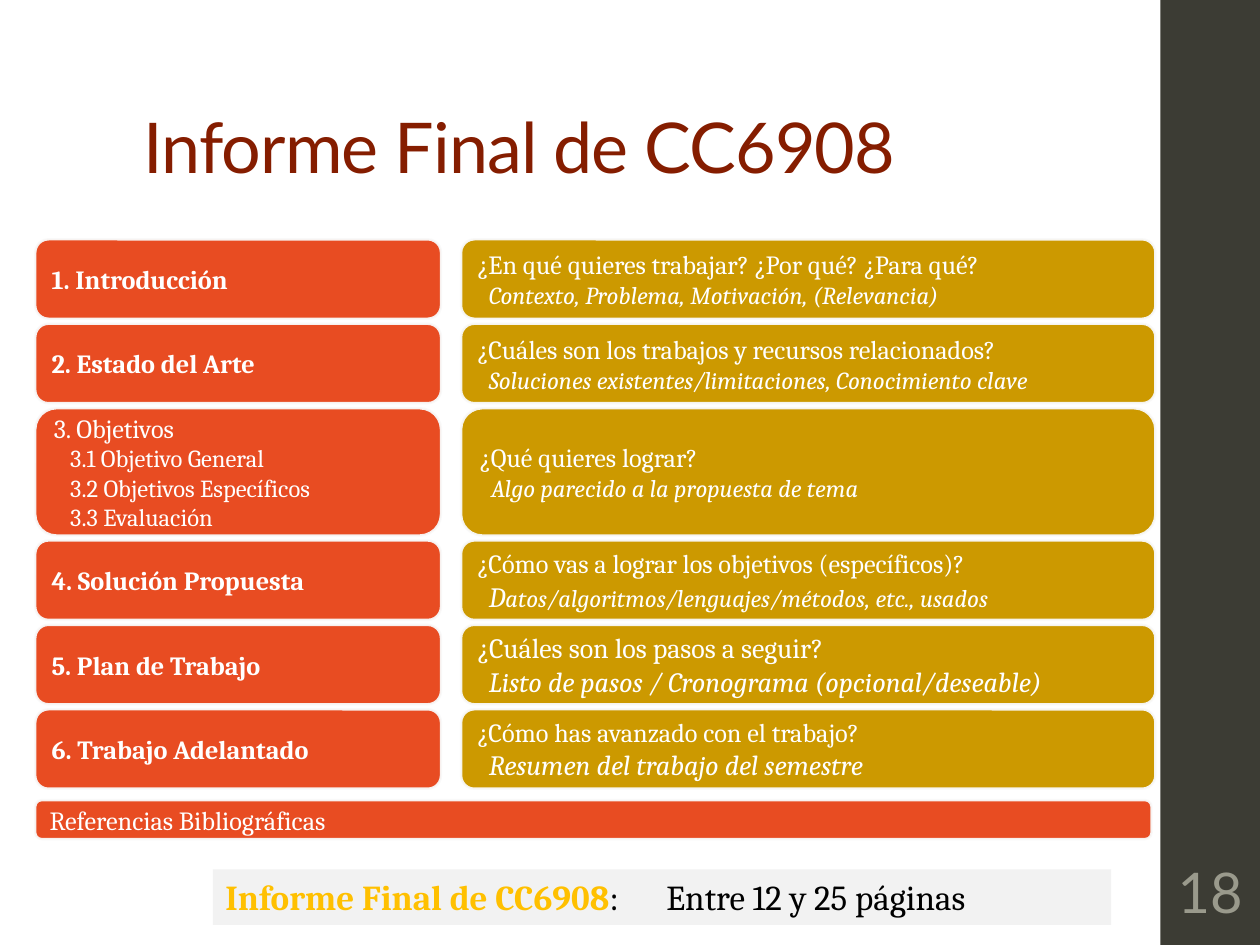
"""Build the slide outlining the final report of CC6908."""
from dataclasses import dataclass

from pptx import Presentation
from pptx.dml.color import RGBColor
from pptx.enum.shapes import MSO_SHAPE as Shape
from pptx.enum.text import MSO_ANCHOR as Anchor, PP_ALIGN as Align
from pptx.oxml.ns import qn
from pptx.util import Inches, Pt
from lxml.etree import SubElement

ORANGE = RGBColor(0xE8, 0x4C, 0x22)
GOLD = RGBColor(0xCC, 0x99, 0x00)
WHITE = RGBColor(0xFF, 0xFF, 0xFF)
EDGE = RGBColor(0xF9, 0xF9, 0xF9)
DARK = RGBColor(0x3C, 0x3C, 0x34)
GRAY = RGBColor(0x9A, 0x9A, 0x8C)
MAROON = RGBColor(0x85, 0x1D, 0x00)
PALE = RGBColor(0xF2, 0xF2, 0xF2)
AMBER = RGBColor(0xFF, 0xC0, 0x00)
BLACK = RGBColor(0x00, 0x00, 0x00)

SERIF, SANS = "Cambria", "Lato"
LEFT_X, LEFT_W = 0.28, 3.22
RIGHT_X, RIGHT_W = 3.66, 5.51
TOP, GAP = 1.9, 0.04


@dataclass
class Line:
    text: str
    size: int = 15
    bold: bool = False
    italic: bool = False
    indent: float = 0
    initial_size: int = 0


@dataclass
class Section:
    heading: list[Line]
    answer: list[Line]
    height: float = 0.63


def heading(text: str) -> list[Line]:
    return [Line(text, bold=True)]


def answer(question: str, detail: str, size: int = 14,
           question_size: int = 15, initial_size: int = 0) -> list[Line]:
    return [Line(question, question_size),
            Line(detail, size, italic=True, indent=0.09, initial_size=initial_size)]


SECTIONS = [
    Section(heading("1. Introducción"),
            answer("¿En qué quieres trabajar? ¿Por qué? ¿Para qué?",
                   "Contexto, Problema, Motivación, (Relevancia)")),
    Section(heading("2. Estado del Arte"),
            answer("¿Cuáles son los trabajos y recursos relacionados?",
                   "Soluciones existentes/limitaciones, Conocimiento clave")),
    Section([Line("3. Objetivos")] + [
                Line(text, 14, indent=0.13) for text in (
                    "3.1 Objetivo General", "3.2 Objetivos Específicos", "3.3 Evaluación")],
            answer("¿Qué quieres lograr?", "Algo parecido a la propuesta de tema"), 1.01),
    Section(heading("4. Solución Propuesta"),
            answer("¿Cómo vas a lograr los objetivos (específicos)?",
                   "Datos/algoritmos/lenguajes/métodos, etc., usados", initial_size=16)),
    Section(heading("5. Plan de Trabajo"),
            answer("¿Cuáles son los pasos a seguir?",
                   "Listo de pasos / Cronograma (opcional/deseable)", 16, 16)),
    Section(heading("6. Trabajo Adelantado"),
            answer("¿Cómo has avanzado con el trabajo?",
                   "Resumen del trabajo del semestre", 16)),
]


def set_font(font, name: str, size: int, color: RGBColor) -> None:
    font.name, font.size = name, Pt(size)
    font.color.rgb = color


def add_block(s, kind, x: float, y: float, w: float, h: float, fill: RGBColor):
    sp = s.shapes.add_shape(kind, Inches(x), Inches(y), Inches(w), Inches(h))
    sp.shadow.inherit = False
    sp.fill.solid()
    sp.fill.fore_color.rgb = fill
    sp.line.fill.background()
    return sp


def add_card(s, x: float, y: float, w: float, h: float,
             fill: RGBColor, lines: list[Line]) -> None:
    sp = add_block(s, Shape.ROUNDED_RECTANGLE, x, y, w, h, fill)
    sp.line.color.rgb = EDGE
    sp.line.width = Pt(1.35)
    edge = sp.line._get_or_add_ln().find(".//" + qn("a:srgbClr"))
    SubElement(edge, qn("a:alpha"), val="95000")
    tf = sp.text_frame
    tf.vertical_anchor = Anchor.MIDDLE
    for i, line in enumerate(lines):
        p = tf.add_paragraph() if i else tf.paragraphs[0]
        p.alignment = Align.LEFT
        p._p.get_or_add_pPr().set("marL", str(Inches(line.indent)))
        set_font(p.font, SERIF, line.size, WHITE)
        p.font.bold, p.font.italic = line.bold, line.italic
        text = line.text
        if line.initial_size:
            r = p.add_run()
            r.text, text = text[0], text[1:]
            r.font.size = Pt(line.initial_size)
        p.add_run().text = text


def add_title(s) -> None:
    sp = s.shapes.title
    sp.left, sp.top, sp.width, sp.height = map(Inches, (1.04, 0.1, 7.95, 1.45))
    tf = sp.text_frame
    tf.vertical_anchor = Anchor.BOTTOM
    p = tf.paragraphs[0]
    p.text = "Informe Final de CC6908"
    p.alignment, p.line_spacing = Align.LEFT, 0.9
    set_font(p.font, SANS, 40, MAROON)
    p.runs[0].font._element.set("spc", "-50")


def add_page_number(s) -> None:
    sp = s.shapes.add_textbox(Inches(9.23), Inches(6.75), Inches(0.75), Inches(0.65))
    tf = sp.text_frame
    tf.word_wrap = True
    tf.vertical_anchor = Anchor.MIDDLE
    tf.margin_left = tf.margin_right = Inches(0.03)
    p = tf.paragraphs[0]
    p.text, p.alignment = "18", Align.CENTER
    set_font(p.font, SANS, 32, GRAY)


def add_length_note(s) -> None:
    sp = add_block(s, Shape.RECTANGLE, 1.69, 6.9, 7.13, 0.44, PALE)
    tf = sp.text_frame
    tf.vertical_anchor = Anchor.TOP
    p = tf.paragraphs[0]
    p.alignment = Align.LEFT
    tabs = SubElement(p._p.get_or_add_pPr(), qn("a:tabLst"))
    SubElement(tabs, qn("a:tab"), pos=str(Inches(3.5)), algn="l")
    for text, color, bold in (("Informe Final de CC6908", AMBER, True),
                              (":\tEntre 12 y 25 páginas", BLACK, False)):
        r = p.add_run()
        r.text = text
        set_font(r.font, SERIF, 20, color)
        r.font.bold = bold


def main() -> None:
    prs = Presentation()
    prs.slide_width, prs.slide_height = Inches(10), Inches(7.5)
    s = prs.slides.add_slide(prs.slide_layouts[5])
    add_block(s, Shape.RECTANGLE, 9.21, 0, 0.79, 7.5, DARK)
    add_title(s)
    add_page_number(s)
    y = TOP
    for section in SECTIONS:
        add_card(s, LEFT_X, y, LEFT_W, section.height, ORANGE, section.heading)
        add_card(s, RIGHT_X, y, RIGHT_W, section.height, GOLD, section.answer)
        y += section.height + GAP
    add_card(s, LEFT_X, 6.35, 8.86, 0.31, ORANGE, [Line("Referencias Bibliográficas")])
    add_length_note(s)
    prs.save("out.pptx")


if __name__ == "__main__":
    main()
